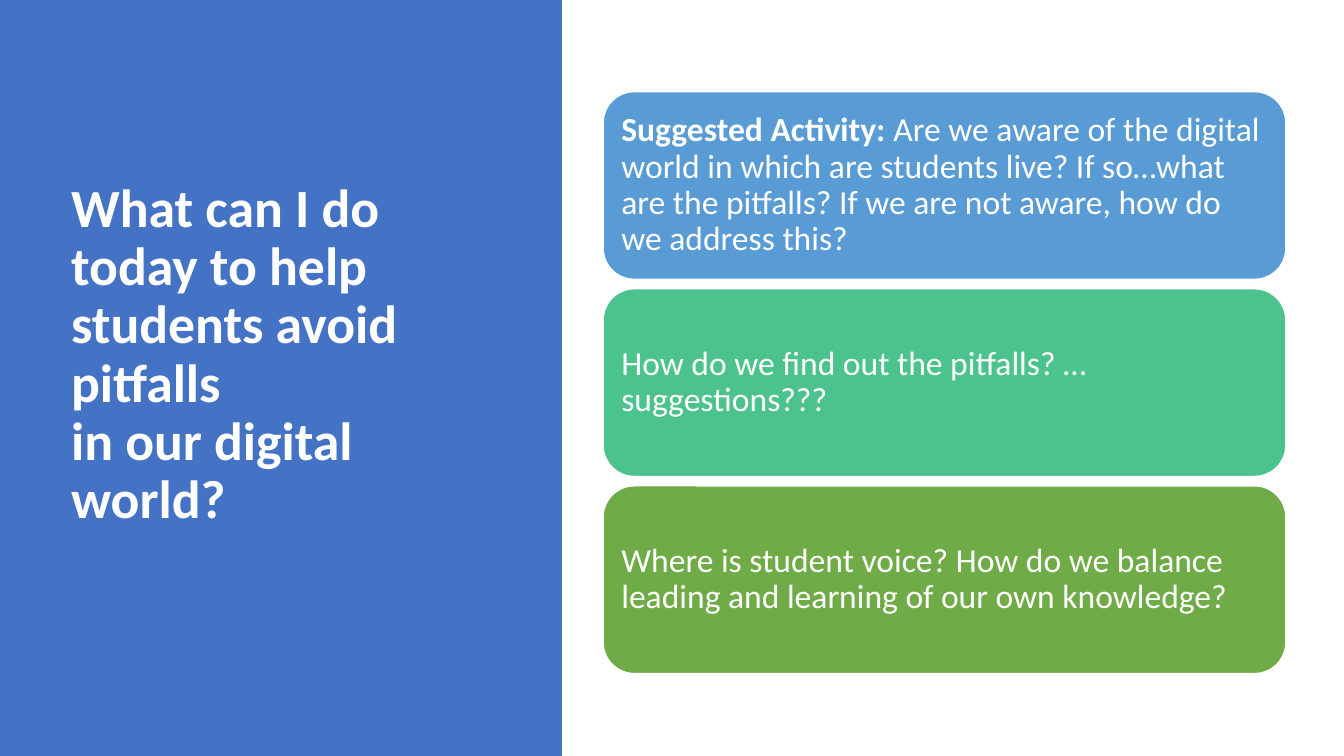
from pptx import Presentation
from pptx.dml.color import RGBColor
from pptx.enum import shapes, text
from pptx.util import Pt

WHITE = RGBColor(0xFF, 0xFF, 0xFF)
BLUE = RGBColor(0x44, 0x72, 0xC4)
SKY = RGBColor(0x59, 0x9B, 0xD5)
MINT = RGBColor(0x4C, 0xC3, 0x8C)
GREEN = RGBColor(0x6F, 0xAB, 0x46)

TITLE = "What can I do today to help students avoid pitfalls\vin our digital world?"
# Each card: fill, bold lead-in, text
CARDS = [
    (SKY, "Suggested Activity: ",
     "Are we aware of the digital world in which are students live? "
     "If so…what are the pitfalls? If we are not aware, how do we address this?"),
    (MINT, "", "How do we find out the pitfalls? …suggestions???"),
    (GREEN, "", "Where is student voice? How do we balance leading and "
                "learning of our own knowledge?"),
]


def add_block(s, kind, x, y, w, h, fill):
    sp = s.shapes.add_shape(kind, Pt(x), Pt(y), Pt(w), Pt(h))
    sp.shadow.inherit = False
    sp.fill.solid()
    sp.fill.fore_color.rgb = fill
    sp.line.fill.background()
    return sp


def write(sp, runs, size):
    """Fill a shape with one left-aligned paragraph of (text, bold) runs."""
    tf = sp.text_frame
    tf.word_wrap = True
    tf.vertical_anchor = text.MSO_ANCHOR.MIDDLE
    p = tf.paragraphs[0]
    p.alignment = text.PP_ALIGN.LEFT
    p.line_spacing = 0.9
    for words, bold in runs:
        # A vertical tab marks a line break
        for i, line in enumerate(words.split("\v")):
            if i:
                p.add_line_break()
            r = p.add_run()
            r.text = line
            f = r.font
            f.name, f.size, f.bold = "Calibri", Pt(size), bold
            f.color.rgb = WHITE


def add_title_panel(s, x, y, w, h):
    add_block(s, shapes.MSO_SHAPE.RECTANGLE, x, y, w, h, BLUE)
    tb = s.shapes.add_textbox(Pt(x + 31), Pt(y + 38), Pt(250), Pt(h - 100))
    write(tb, [(TITLE, True)], 28.8)


def add_cards(s, x, y, w, h, gap=4.8):
    card_h = (h - gap * (len(CARDS) - 1)) / len(CARDS)
    for i, (fill, lead, body) in enumerate(CARDS):
        sp = add_block(s, shapes.MSO_SHAPE.ROUNDED_RECTANGLE,
                       x, y + i * (card_h + gap), w, card_h, fill)
        sp.adjustments[0] = 0.167
        sp.line.color.rgb = WHITE
        sp.line.width = Pt(1)
        tf = sp.text_frame
        tf.margin_left = tf.margin_right = tf.margin_top = tf.margin_bottom = Pt(5)
        runs = [(lead, True)] if lead else []
        write(sp, runs + [(body, False)], 18)


def main():
    prs = Presentation()
    prs.slide_width, prs.slide_height = Pt(720), Pt(405)
    s = prs.slides.add_slide(prs.slide_layouts[6])
    # Left: question; right: stacked answers
    add_title_panel(s, 0, 0, 301, 405)
    add_cards(s, 323, 49, 366, 312)
    prs.save("out.pptx")


if __name__ == "__main__":
    main()
